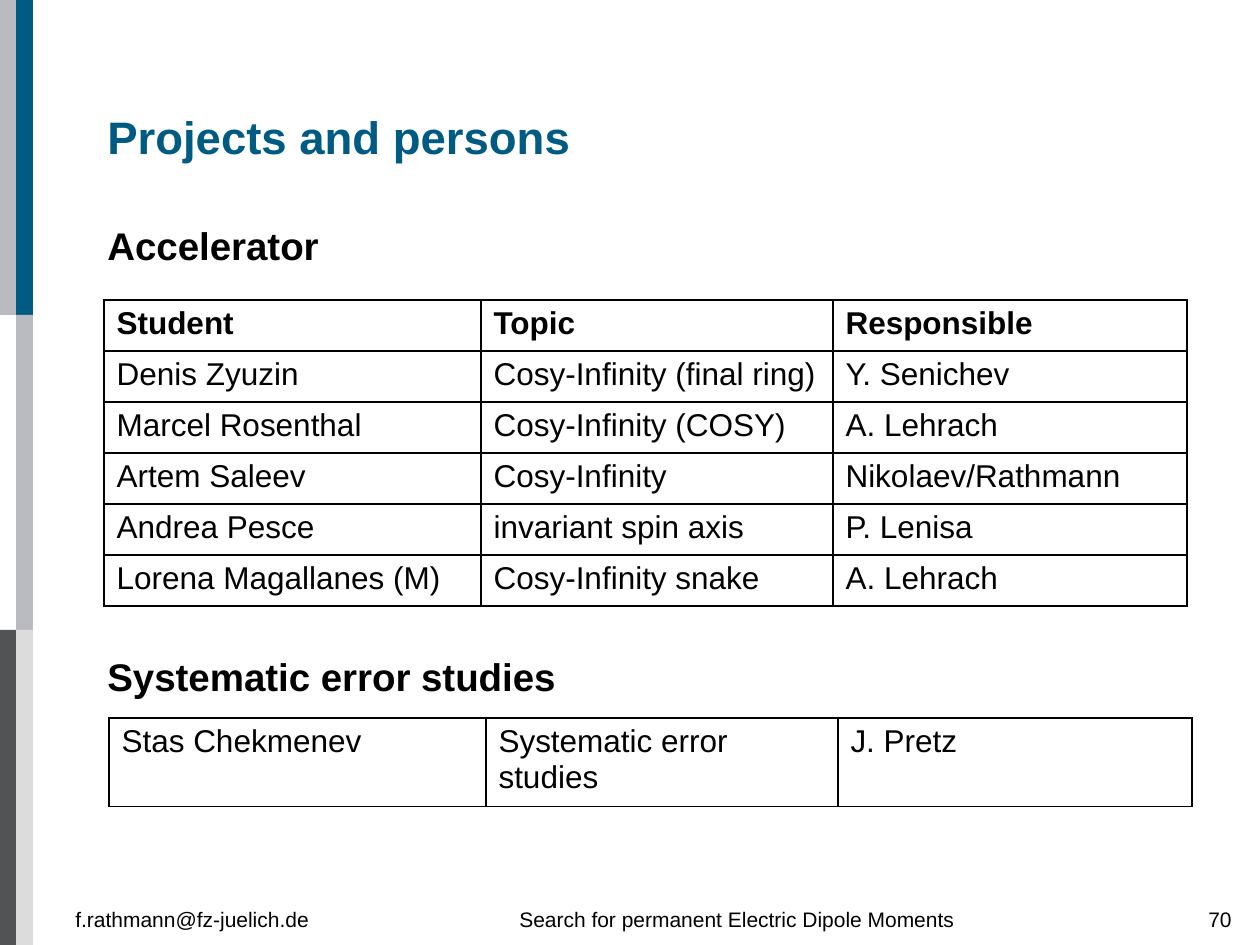
from lxml import etree
from pptx import Presentation, util as u
from pptx.dml.color import RGBColor
from pptx.enum import shapes, text
from pptx.oxml import ns

COLORS = {
    "blue": "005B82",
    "silver": "B9BBC0",
    "slate": "515355",
    "pale": "DCDCDC",
    "black": "000000",
}
ACCELERATOR = [
    ["Student", "Topic", "Responsible"],
    ["Denis Zyuzin", "Cosy-Infinity (final ring)", "Y. Senichev"],
    ["Marcel Rosenthal", "Cosy-Infinity (COSY)", "A. Lehrach"],
    ["Artem Saleev", "Cosy-Infinity", "Nikolaev/Rathmann"],
    ["Andrea Pesce", "invariant spin axis", "P. Lenisa"],
    ["Lorena Magallanes (M)", "Cosy-Infinity snake", "A. Lehrach"],
]
SYSTEMATICS = [["Stas Chekmenev", "Systematic error studies", "J. Pretz"]]
COLUMNS = [377, 352, 354]


def px(n):
    return u.Emu(round(n * 914400 / 126))


def rgb(name):
    return RGBColor.from_string(COLORS[name])


def write(tf, words, size=18, bold=False, color="black", align="LEFT"):
    p = tf.paragraphs[0]
    p.alignment = getattr(text.PP_ALIGN, align)
    r = p.add_run()
    r.text = words
    r.font.name = "Arial"
    r.font.size = u.Pt(size)
    r.font.bold = bold
    r.font.color.rgb = rgb(color)


class Deck:
    """Holds the presentation, its current slide and the shared style."""

    def __init__(self, width, height):
        self.prs = Presentation()
        self.prs.slide_width, self.prs.slide_height = px(width), px(height)
        self.s = self.prs.slides.add_slide(self.prs.slide_layouts[6])

    def bar(self, x, y, w, h, color):
        sp = self.s.shapes.add_shape(
            shapes.MSO_SHAPE.RECTANGLE, px(x), px(y), px(w), px(h))
        sp.shadow.inherit = False
        sp.fill.solid()
        sp.fill.fore_color.rgb = rgb(color)
        sp.line.fill.background()

    def label(self, x, y, w, h, words, anchor="TOP", **style):
        tf = self.s.shapes.add_textbox(px(x), px(y), px(w), px(h)).text_frame
        tf.word_wrap = True
        tf.vertical_anchor = getattr(text.MSO_ANCHOR, "" + anchor)
        write(tf, words, **style)

    def border(self, cell):
        props = cell._tc.get_or_add_tcPr()
        for side in ("lnL", "lnR", "lnT", "lnB"):
            ln = etree.SubElement(props, ns.qn(f"a:{side}"), w=str(u.Pt(1)))
            fill = etree.SubElement(ln, ns.qn("a:solidFill"))
            etree.SubElement(fill, ns.qn("a:srgbClr"), val=COLORS["black"])

    def table(self, x, y, rows, row_height, header=False):
        table = self.s.shapes.add_table(
            len(rows), len(COLUMNS), px(x), px(y),
            px(sum(COLUMNS)), px(row_height * len(rows))).table
        table.first_row = header
        table.horz_banding = False
        for column, width in zip(table.columns, COLUMNS):
            column.width = px(width)
        for i, row in enumerate(rows):
            table.rows[i].height = px(row_height)
            for j, words in enumerate(row):
                cell = table.cell(i, j)
                self.border(cell)
                cell.fill.background()
                write(cell.text_frame, words, bold=header and i == 0)


def main():
    deck = Deck(1260, 945)
    third = 315
    deck.bar(0, 0, 17, third, "silver")
    deck.bar(0, 2 * third, 17, third, "slate")
    for i, color in enumerate(["blue", "silver", "pale"]):
        deck.bar(16, i * third, 17, third, color)

    deck.label(95, 88, 1071, 96, "Projects and persons", anchor="MIDDLE",
               size=26, bold=True, color="blue")
    for y, heading in [(216, "Accelerator"), (647, "Systematic error studies")]:
        deck.label(95, y, 1071, 56, heading, size=22, bold=True)

    deck.table(104, 300, ACCELERATOR, 51, header=True)
    deck.table(109, 718, SYSTEMATICS, 83)

    for x, w, words, align in [
        (63, 275, "f.rathmann@fz-juelich.de", "LEFT"),
        (348, 778, "Search for permanent Electric Dipole Moments", "CENTER"),
        (1136, 108, "70", "RIGHT"),
    ]:
        deck.label(x, 888, w, 50, words, anchor="BOTTOM", size=12, align=align)
    deck.prs.save("out.pptx")


if __name__ == "__main__":
    main()
